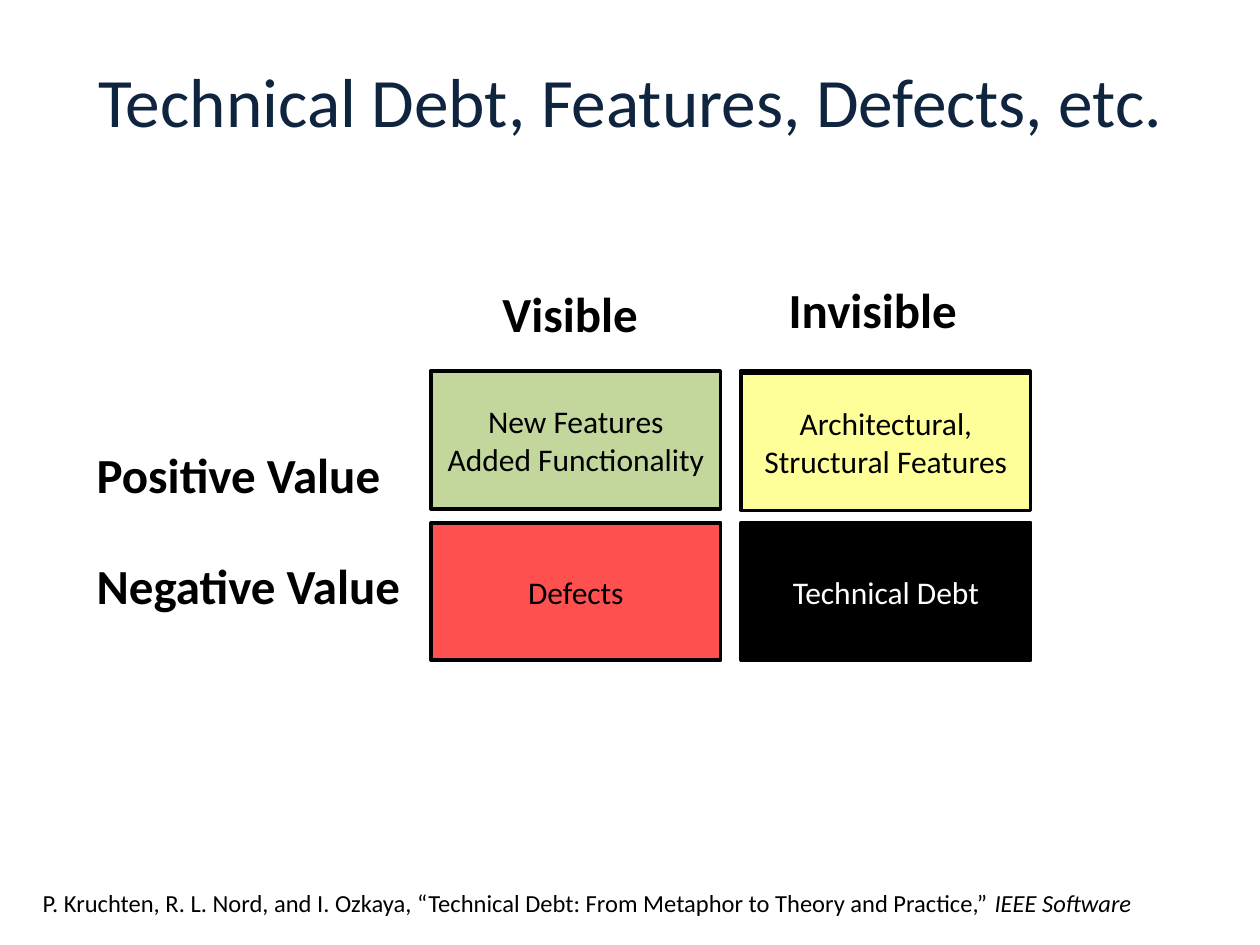
from pptx import Presentation
from pptx.dml.color import RGBColor
from pptx.enum.shapes import MSO_SHAPE
from pptx.enum.text import MSO_ANCHOR, PP_ALIGN
from pptx.util import Cm, Pt

RECTANGLE = MSO_SHAPE.RECTANGLE
MIDDLE, TOP = MSO_ANCHOR.MIDDLE, MSO_ANCHOR.TOP
CENTER, LEFT = PP_ALIGN.CENTER, PP_ALIGN.LEFT

FONT = "Calibri"
COLORS = {
    "navy": "0F243E",
    "black": "000000",
    "white": "FFFFFF",
    "green": "C3D69B",
    "yellow": "FFFF99",
    "red": "FF5050",
}

# Matrix geometry in centimetres
COLUMNS = (8.69, 14.94)
CELL_WIDTH, CELL_HEIGHT = 5.84, 2.77
BACKING_TOP = 7.47


def color(name):
    return RGBColor.from_string(COLORS[name])


def write_text(frame, text, size=18, ink="black", bold=False, italic_tail="",
               align=LEFT, anchor=TOP, wrap=True):
    """Fill a frame with one paragraph; a newline becomes a line break."""
    frame.word_wrap = wrap
    frame.vertical_anchor = anchor
    para = frame.paragraphs[0]
    para.text = text.replace("\n", "\v")
    para.alignment = align
    if italic_tail:
        span = para.add_run()
        span.text = italic_tail
        span.font.italic = True
    para.font.size = Pt(size)
    for span in para.runs:
        span.font.name = FONT
        span.font.size = Pt(size)
        span.font.bold = bold
        span.font.color.rgb = color(ink)


def add_text(page, left, top, width, height, text, **style):
    box = page.shapes.add_textbox(Cm(left), Cm(top), Cm(width), Cm(height))
    write_text(box.text_frame, text, **style)


def add_cell(page, left, top, fill, text="", ink="black"):
    cell = page.shapes.add_shape(
        RECTANGLE, Cm(left), Cm(top), Cm(CELL_WIDTH), Cm(CELL_HEIGHT))
    cell.shadow.inherit = False
    cell.fill.solid()
    cell.fill.fore_color.rgb = color(fill)
    cell.line.color.rgb = color("black")
    cell.line.width = Pt(2)
    if text:
        write_text(cell.text_frame, text, ink=ink, align=CENTER, anchor=MIDDLE)


def main():
    deck = Presentation()
    deck.slide_width, deck.slide_height = Cm(25.4), Cm(19.05)
    page = deck.slides.add_slide(deck.slide_layouts[6])

    # Title and citation
    add_text(page, 0.94, 0.43, 23.55, 3.18,
             "Technical Debt, Features, Defects, etc.",
             size=39.6, ink="navy", align=CENTER, anchor=MIDDLE)
    add_text(page, 0.61, 17.78, 24.18, 0.86,
             "P. Kruchten, R. L. Nord, and I. Ozkaya, “Technical Debt: "
             "From Metaphor to Theory and Practice,” ",
             size=14, italic_tail="IEEE Software")

    # Column and row headings
    for left, top, width, text in (
        (9.88, 5.59, 3.43, "Visible"),
        (15.65, 5.51, 4.47, "Invisible"),
        (1.7, 8.84, 6.53, "Positive Value"),
        (1.7, 11.07, 6.96, "Negative Value"),
    ):
        add_text(page, left, top, width, 1.45, text,
                 size=28, bold=True, wrap=False)

    # White backing behind the upper row
    for left in COLUMNS:
        add_cell(page, left, BACKING_TOP, "white")

    # Matrix cells
    for column, top, fill, text, ink in (
        (0, 7.49, "green", "New Features\nAdded Functionality", "black"),
        (1, 7.52, "yellow", "Architectural, Structural Features", "black"),
        (0, 10.54, "red", "Defects", "black"),
        (1, 10.54, "black", "Technical Debt", "white"),
    ):
        add_cell(page, COLUMNS[column], top, fill, text, ink)

    deck.save("out.pptx")


if __name__ == "__main__":
    main()
